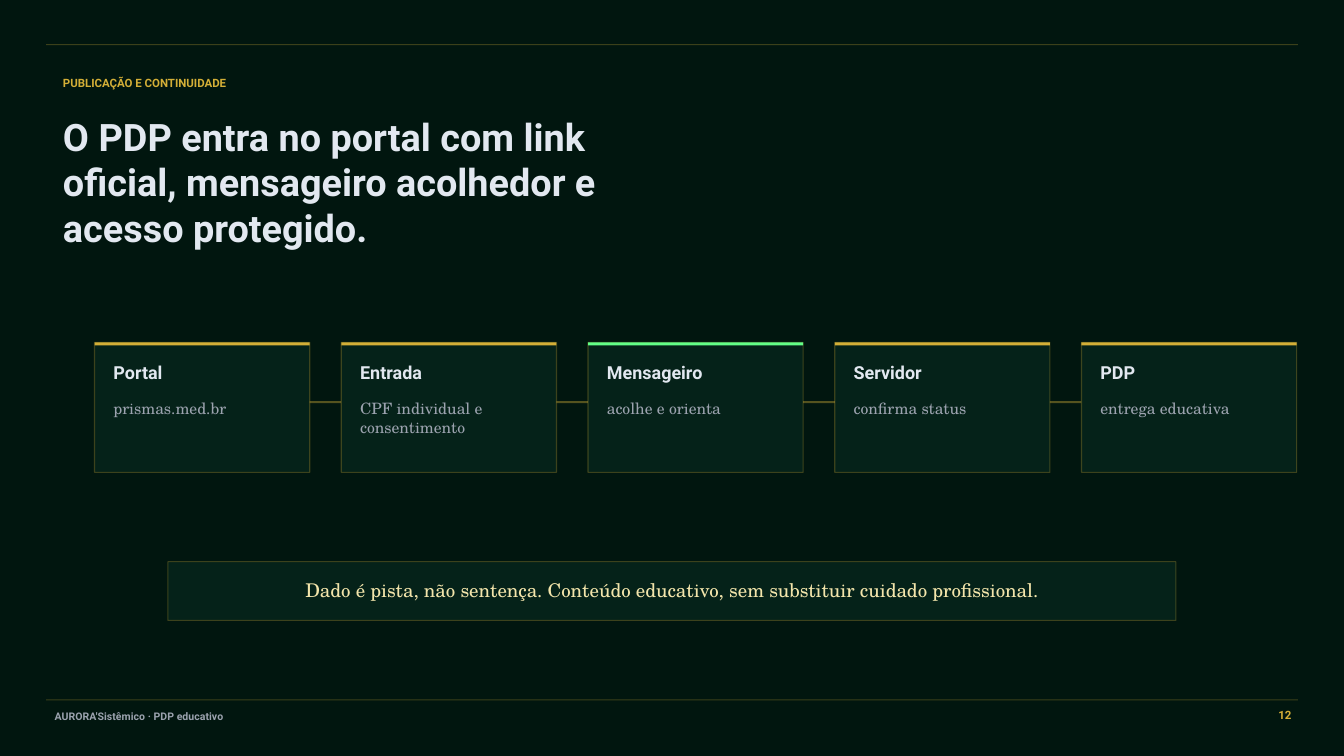
from dataclasses import dataclass

from lxml.etree import SubElement
from pptx import Presentation
from pptx.dml.color import RGBColor
from pptx.enum.shapes import MSO_CONNECTOR as Connector, MSO_SHAPE as Shape
from pptx.enum.text import PP_ALIGN as Align
from pptx.oxml.ns import qn
from pptx.util import Inches, Pt

# Grid: 128 columns by 72 rows over the whole slide
WIDTH, HEIGHT = Inches(13.33), Inches(7.5)
COLUMNS, ROWS = 128, 72

# Palette and fonts
NIGHT, PANEL = "01160F", "08291F"
GOLD, GREEN, CREAM = "D4AF37", "62FF87", "F3E5AB"
LIGHT, GREY = "E2E8F0", "9CA3AF"
SANS, SERIF = "Roboto", "TeX Gyre Schola"


@dataclass(frozen=True)
class Box:
    left: float
    top: float
    width: float
    height: float

    def emu(self) -> tuple[int, int, int, int]:
        return (across(self.left), down(self.top),
                across(self.width), down(self.height))


@dataclass(frozen=True)
class Style:
    size: float
    color: str
    font: str = SANS
    bold: bool = True
    align: Align = Align.LEFT


@dataclass(frozen=True)
class Step:
    title: str
    detail: str
    accent: str = GOLD


def across(columns: float) -> int:
    return round(WIDTH * columns / COLUMNS)


def down(rows: float) -> int:
    return round(HEIGHT * rows / ROWS)


def paint(fill, color: str, opacity: int = 100) -> None:
    """Fill with a solid colour at an opacity in percent."""
    fill.solid()
    fill.fore_color.rgb = RGBColor.from_string(color)
    if opacity < 100:
        properties = fill._xPr
        color_node = properties.find(f"{qn('a:solidFill')}/{qn('a:srgbClr')}")
        SubElement(color_node, qn("a:alpha"), val=str(opacity * 1000))


def add_panel(slide, box: Box) -> None:
    shape = slide.shapes.add_shape(Shape.RECTANGLE, *box.emu())
    shape.shadow.inherit = False
    paint(shape.fill, PANEL, 67)
    paint(shape.line.fill, GOLD, 27)
    shape.line.width = Pt(0.75)


def add_bar(slide, box: Box, color: str) -> None:
    shape = slide.shapes.add_shape(Shape.RECTANGLE, *box.emu())
    shape.shadow.inherit = False
    paint(shape.fill, color)
    shape.line.fill.background()


def add_line(slide, left: float, right: float, row: float,
             opacity: int, points: float) -> None:
    line = slide.shapes.add_connector(
        Connector.STRAIGHT, across(left), down(row), across(right), down(row))
    paint(line.line.fill, GOLD, opacity)
    line.line.width = Pt(points)
    SubElement(line._element.spPr, qn("a:effectLst"))


def add_text(slide, box: Box, text: str, style: Style) -> None:
    frame = slide.shapes.add_textbox(*box.emu()).text_frame
    frame.word_wrap = True
    frame.margin_left = frame.margin_right = 0
    frame.margin_top = frame.margin_bottom = 0
    paragraph = frame.paragraphs[0]
    paragraph.text = text
    paragraph.alignment = style.align
    font = paragraph.font
    font.name, font.size, font.bold = style.font, Pt(style.size), style.bold
    font.color.rgb = RGBColor.from_string(style.color)


STEPS = [
    Step("Portal", "prismas.med.br"),
    Step("Entrada", "CPF individual e consentimento"),
    Step("Mensageiro", "acolhe e orienta", GREEN),
    Step("Servidor", "confirma status"),
    Step("PDP", "entrega educativa"),
]
STEPS_LEFT, STEPS_TOP, STEP_WIDTH, STEP_HEIGHT, GAP = 9, 32.6, 20.5, 12.4, 3
PADDING = 1.8
STEP_TITLE = Style(12.8, LIGHT)
STEP_DETAIL = Style(11.2, GREY, SERIF, bold=False)


def add_steps(slide) -> None:
    for index, step in enumerate(STEPS):
        left = STEPS_LEFT + index * (STEP_WIDTH + GAP)
        right = left + STEP_WIDTH
        inner_left, inner_width = left + PADDING, STEP_WIDTH - 2 * PADDING
        add_panel(slide, Box(left, STEPS_TOP, STEP_WIDTH, STEP_HEIGHT))
        add_bar(slide, Box(left, STEPS_TOP, STEP_WIDTH, 0.3), step.accent)
        add_text(slide, Box(inner_left, STEPS_TOP + 1.8, inner_width, 2.6),
                 step.title, STEP_TITLE)
        add_text(slide, Box(inner_left, STEPS_TOP + 5.4, inner_width, 5.8),
                 step.detail, STEP_DETAIL)
        if index < len(STEPS) - 1:
            add_line(slide, right, right + GAP, STEPS_TOP + 5.7, 40, 1.5)


def main() -> None:
    presentation = Presentation()
    presentation.slide_width, presentation.slide_height = WIDTH, HEIGHT
    slide = presentation.slides.add_slide(presentation.slide_layouts[6])
    paint(slide.background.fill, NIGHT)

    # Top and bottom rules
    for row in (4.25, 66.65):
        add_line(slide, 4.4, 123.6, row, 27, 0.75)

    # Heading
    add_text(slide, Box(6, 7.2, 52, 2.2), "PUBLICAÇÃO E CONTINUIDADE",
             Style(8.2, GOLD))
    add_text(slide, Box(6, 10.8, 59, 13.2),
             "O PDP entra no portal com link oficial, "
             "mensageiro acolhedor e acesso protegido.", Style(27, LIGHT))

    # Flow of steps
    add_steps(slide)

    # Closing statement
    add_panel(slide, Box(16, 53.5, 96, 5.6))
    add_text(slide, Box(19, 55.1, 90, 2.4),
             "Dado é pista, não sentença. Conteúdo educativo, "
             "sem substituir cuidado profissional.",
             Style(13.5, CREAM, SERIF, bold=False, align=Align.CENTER))

    # Footer
    add_text(slide, Box(5.2, 67.6, 52, 1.8),
             "AURORA'Sistêmico · PDP educativo", Style(7.5, GREY))
    add_text(slide, Box(119, 67.4, 4, 1.8), "12",
             Style(8.2, GOLD, align=Align.RIGHT))

    presentation.save("out.pptx")


if __name__ == "__main__":
    main()
